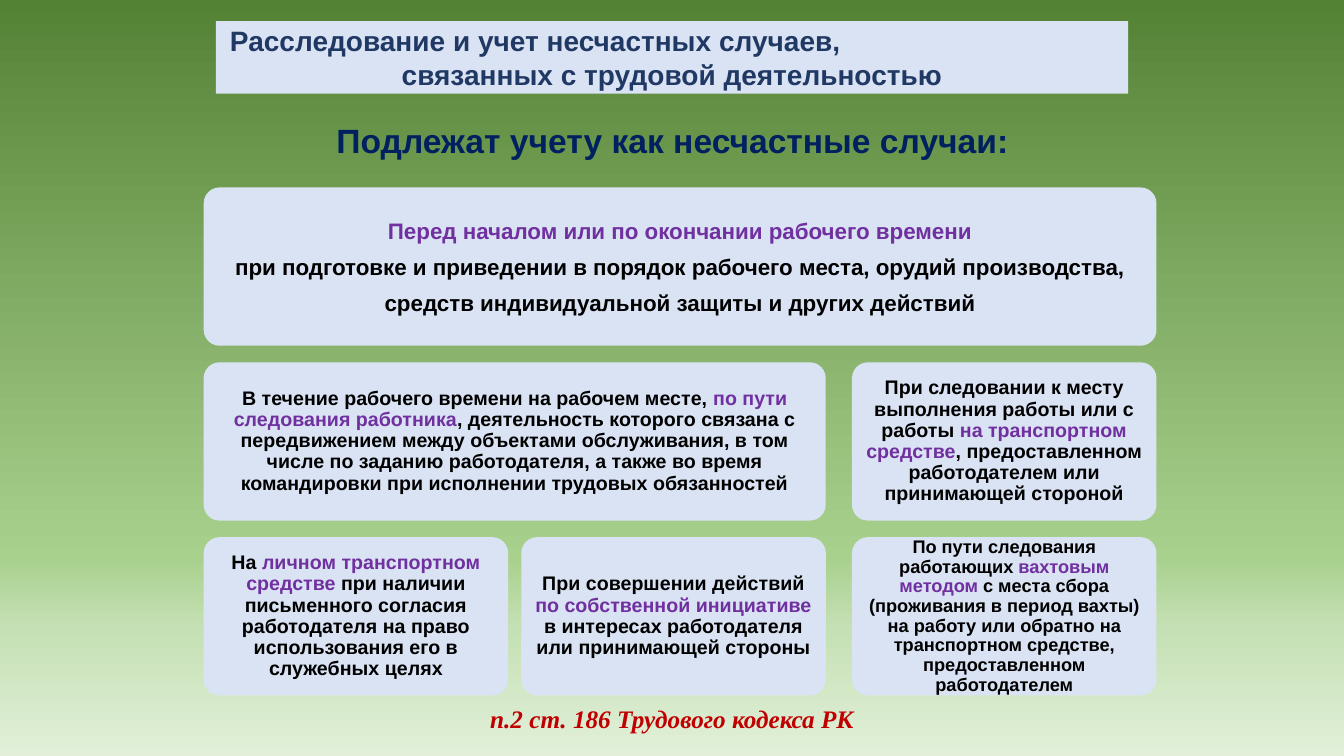
from copy import deepcopy
from dataclasses import dataclass

from pptx import Presentation
from pptx.dml.color import RGBColor
from pptx.enum.shapes import MSO_SHAPE
from pptx.enum.text import MSO_ANCHOR, PP_ALIGN
from pptx.oxml.ns import qn
from pptx.util import Inches, Pt


@dataclass(frozen=True)
class Theme:
    panel: str = "DAE3F3"
    heading: str = "002060"
    banner: str = "203864"
    body: str = "000000"
    accent: str = "7030A0"
    source: str = "C00000"
    gradient: tuple = ((0, "548235"), (0.74, "A9D18E"), (0.83, "C5E0B4"), (1, "E2F0D9"))
    sans: str = "Arial"
    serif: str = "Times New Roman"
    heading_size: int = 24
    banner_size: int = 20
    source_size: int = 18
    lead_size: int = 16
    card_size: int = 14
    dense_size: int = 13


class SlideBuilder:
    def __init__(self, slide, theme):
        self.slide = slide
        self.theme = theme

    def background(self):
        fill = self.slide.background.fill
        fill.gradient()
        fill.gradient_angle = 270
        stop_list = self.slide.element.find(".//" + qn("a:gsLst"))
        while len(stop_list) < len(self.theme.gradient):
            stop_list.append(deepcopy(stop_list[0]))
        for stop, (position, color) in zip(fill.gradient_stops, self.theme.gradient):
            stop.position = position
            stop.color.rgb = RGBColor.from_string(color)

    def panel(self, kind, box):
        sp = self.slide.shapes.add_shape(kind, *map(Inches, box))
        sp.shadow.inherit = False
        sp.fill.solid()
        sp.fill.fore_color.rgb = RGBColor.from_string(self.theme.panel)
        sp.line.fill.background()
        return sp

    def frame(self, sp, side, top, anchor=MSO_ANCHOR.MIDDLE):
        tf = sp.text_frame
        tf.word_wrap = True
        tf.vertical_anchor = anchor
        tf.margin_left = tf.margin_right = Inches(side)
        tf.margin_top = tf.margin_bottom = Inches(top)
        return tf

    def style(self, r, size, color, font=None, italic=False):
        r.font.name = font or self.theme.sans
        r.font.size = Pt(size)
        r.font.bold = True
        r.font.italic = italic
        r.font.color.rgb = RGBColor.from_string(color)

    def label(self, text, box, size, color, anchor=MSO_ANCHOR.MIDDLE, font=None, italic=False):
        sp = self.slide.shapes.add_textbox(*map(Inches, box))
        tf = self.frame(sp, 0.1, 0.05, anchor)
        tf.text = text
        p = tf.paragraphs[0]
        p.alignment = PP_ALIGN.CENTER
        self.style(p.runs[0], size, color, font, italic)

    def banner(self, lines, box):
        tf = self.frame(self.panel(MSO_SHAPE.RECTANGLE, box), 0.14, 0)
        tf.text = "\n".join(lines)
        for p, alignment in zip(tf.paragraphs, (PP_ALIGN.LEFT, PP_ALIGN.CENTER)):
            p.alignment = alignment
            self.style(p.runs[0], self.theme.banner_size, self.theme.banner)

    def card(self, paragraphs, box, size, line_spacing=0.9):
        """Each paragraph is split at "|"; every second part is accented."""
        sp = self.panel(MSO_SHAPE.ROUNDED_RECTANGLE, box)
        sp.adjustments[0] = 0.1
        tf = self.frame(sp, 0.06, 0)
        for i, text in enumerate(paragraphs):
            p = tf.add_paragraph() if i else tf.paragraphs[0]
            p.alignment = PP_ALIGN.CENTER
            p.line_spacing = line_spacing
            p.space_after = Pt(0.4 * size)
            for j, part in enumerate(text.split("|")):
                if part:
                    r = p.add_run()
                    r.text = part
                    self.style(r, size, self.theme.accent if j % 2 else self.theme.body)


def main():
    prs = Presentation()
    prs.slide_width, prs.slide_height = Inches(13.33), Inches(7.5)
    theme = Theme()
    s = SlideBuilder(prs.slides.add_slide(prs.slide_layouts[6]), theme)
    s.background()

    # Banner and heading
    s.banner(
        ("Расследование и учет несчастных случаев,", "связанных с трудовой деятельностью"),
        (2.14, 0.21, 9.05, 0.72),
    )
    s.label("Подлежат учету как несчастные случаи:", (2.21, 1.15, 8.92, 0.47),
            theme.heading_size, theme.heading)

    # Card grid: three columns, three rows
    columns = (2.02, 5.17, 8.45)
    card_w, card_h = 3.02, 1.57
    rows = [1.86 + 1.735 * i for i in range(3)]

    def cell(row, first, last):
        return columns[first], rows[row], columns[last] + card_w - columns[first], card_h

    s.card(
        ("|Перед началом или по окончании рабочего времени",
         "при подготовке и приведении в порядок рабочего места, орудий производства,",
         "средств индивидуальной защиты и других действий"),
        cell(0, 0, 2), theme.lead_size, 1.0,
    )
    cards = (
        ("В течение рабочего времени на рабочем месте, |по пути следования работника|, "
         "деятельность которого связана с передвижением между объектами обслуживания, "
         "в том числе по заданию работодателя, а также во время командировки "
         "при исполнении трудовых обязанностей", cell(1, 0, 1), theme.card_size),
        ("При следовании к месту выполнения работы или с работы |на транспортном средстве|, "
         "предоставленном работодателем или принимающей стороной",
         cell(1, 2, 2), theme.card_size),
        ("На |личном транспортном средстве |при наличии письменного согласия работодателя "
         "на право использования его в служебных целях", cell(2, 0, 0), theme.card_size),
        ("При совершении действий |по собственной инициативе |"
         "в интересах работодателя или принимающей стороны",
         cell(2, 1, 1), theme.card_size),
        ("По пути следования работающих |вахтовым методом| с места сбора "
         "(проживания в период вахты) на работу или обратно на транспортном средстве, "
         "предоставленном работодателем", cell(2, 2, 2), theme.dense_size),
    )
    for text, box, size in cards:
        s.card((text,), box, size)

    # Legal source
    s.label("п.2 ст. 186 Трудового кодекса РК", (3.33, 6.93, 6.67, 0.4),
            theme.source_size, theme.source, MSO_ANCHOR.TOP, theme.serif, True)

    prs.save("out.pptx")


if __name__ == "__main__":
    main()
